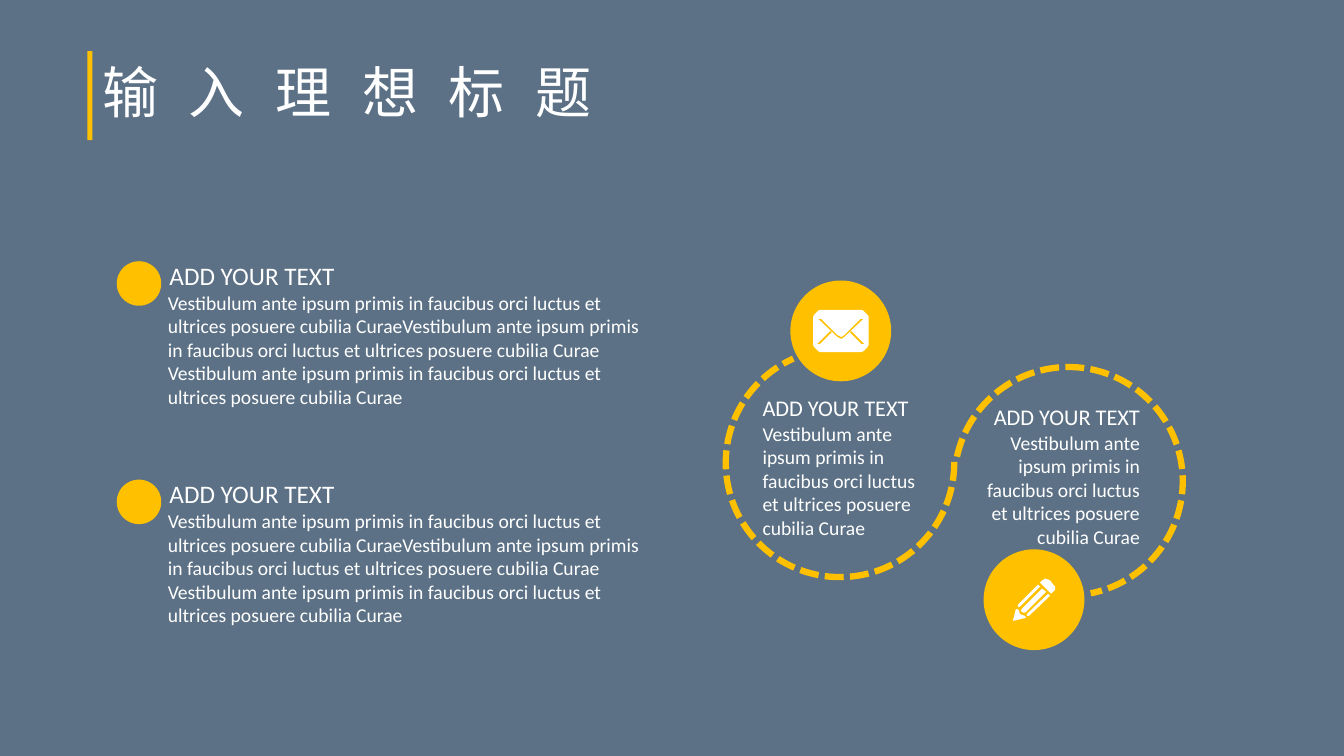
import math
from dataclasses import dataclass

import pptx
import pptx.util
import pptx.dml.color
import pptx.enum.dml
import pptx.enum.shapes
import pptx.enum.text
import pptx.oxml.ns
from lxml import etree

SHAPE = pptx.enum.shapes.MSO_SHAPE
ALIGN = pptx.enum.text.PP_ALIGN
ANCHOR = pptx.enum.text.MSO_ANCHOR


@dataclass(frozen=True)
class Theme:
    ground: str = "5C7185"
    accent: str = "FFC000"
    light: str = "FFFFFF"
    latin: str = "Calibri"
    cjk: str = "Noto Sans CJK SC"
    title: int = 40
    title_tracking: int = 22
    item_heading: int = 18
    loop_heading: int = 16
    body: int = 14
    loop_line: float = 4.5


THEME = Theme()

# The slide is a grid of 16 by 9 square cells; every box is in cells
COLUMNS, ROWS = 16, 9
CELL = pptx.util.Inches(13.333) / COLUMNS
ICON_UNIT = pptx.util.Inches(0.01)

HEADING = "ADD YOUR TEXT"
SENTENCE = ("Vestibulum ante ipsum primis in faucibus orci luctus et "
            "ultrices posuere cubilia Curae")


def cells(*lengths):
    return [pptx.util.Emu(round(length * CELL)) for length in lengths]


def rgb(code):
    return pptx.dml.color.RGBColor.from_string(code)


def paint(shape, color):
    shape.shadow.inherit = False
    shape.fill.solid()
    shape.fill.fore_color.rgb = rgb(color)
    shape.line.fill.background()


def add_solid(slide, kind, box, color):
    paint(slide.shapes.add_shape(kind, *cells(*box)), color)


def add_text(slide, box, paragraphs, size, font=THEME.latin, align=ALIGN.LEFT):
    frame = slide.shapes.add_textbox(*cells(*box)).text_frame
    frame.word_wrap = True
    for index, words in enumerate(paragraphs):
        paragraph = frame.add_paragraph() if index else frame.paragraphs[0]
        paragraph.alignment = align
        run = paragraph.add_run()
        run.text = words
        run.font.size = pptx.util.Pt(size)
        run.font.name = font
        run.font.color.rgb = rgb(THEME.light)
    return frame


# Icons: contours in hundredths of an inch, drawn as one outline with gaps
def rounded_outline(width, height, radius, steps=6):
    corners = [(width - radius, height - radius), (radius, height - radius),
               (radius, radius), (width - radius, radius)]
    return [(x + radius * math.cos(angle), y + radius * math.sin(angle))
            for quarter, (x, y) in enumerate(corners)
            for angle in [(quarter + step / steps) * math.pi / 2
                          for step in range(steps + 1)]]


ENVELOPE = (55, 42, [
    rounded_outline(55, 42, 10),
    [(5, 9), (24, 27), (27.5, 29), (31, 27), (50, 9), (47, 9),
     (31, 25), (27.5, 27), (24, 25), (8, 9)],
    [(38, 21), (36, 22), (48, 34), (51, 34)],
    [(17, 21), (4, 34), (7, 34), (19, 22)],
])
PENCIL = (42, 42, [
    [(40, 13), (38, 15), (27, 4), (29, 2), (32, 0.4), (35, 0.6), (37, 2),
     (40, 6), (41.6, 8), (41.5, 11)],
    [(14, 35), (14, 37), (16, 37), (37, 17), (35, 15)],
    [(5, 26), (5, 28), (7, 28), (27, 8), (25, 6)],
    [(29, 10), (9, 30), (8.5, 31.5), (9, 33), (11, 34), (13, 33), (33, 13)],
    [(13, 39), (12, 37), (9, 36.5), (7, 35), (6, 32), (6, 31), (3, 30),
     (0, 42)],
])


def add_icon(slide, center_x, center_y, icon):
    width, height, contours = icon
    builder = slide.shapes.build_freeform(*contours[0][0], scale=ICON_UNIT)
    for index, contour in enumerate(contours):
        if index:
            builder.move_to(*contour[0])
        builder.add_line_segments(contour[1:], close=True)
    left, top = cells(center_x, center_y)
    paint(builder.convert_to_shape(int(left - width * ICON_UNIT / 2),
                                   int(top - height * ICON_UNIT / 2)),
          THEME.light)


# Title with its accent bar
def add_title(slide, left, top, width, height):
    add_solid(slide, SHAPE.RECTANGLE, (left, top + 0.34, 0.06, 1.06),
              THEME.accent)
    frame = add_text(slide, (left + 0.06, top, width, height),
                     ["输入理想标题"], THEME.title, THEME.cjk)
    frame.vertical_anchor = ANCHOR.MIDDLE
    frame.paragraphs[0].line_spacing = 0.9
    properties = frame.paragraphs[0].runs[0].font._element
    properties.set("spc", str(THEME.title_tracking * 100))
    etree.SubElement(properties, pptx.oxml.ns.qn("a:ea"), typeface=THEME.cjk)


# List item: dot, heading and two paragraphs
def add_item(slide, left, top, width):
    add_text(slide, (left + 0.49, top + 0.36, width - 0.49, 1.81),
             [SENTENCE + SENTENCE, SENTENCE], THEME.body)
    add_text(slide, (left + 0.51, top, 2.38, 0.48), [HEADING],
             THEME.item_heading)
    add_solid(slide, SHAPE.OVAL, (left, top + 0.07, 0.53, 0.53), THEME.accent)


# Dashed loop; its badge and text are placed from the loop's corner
def add_loop(slide, left, top, size, rotation, badge, icon, text_top, align):
    arc = slide.shapes.add_shape(SHAPE.ARC, *cells(left, top, size, size))
    arc.adjustments[0] = 68.178
    arc.adjustments[1] = 0
    arc.rotation = rotation
    arc.shadow.inherit = False
    arc.fill.background()
    arc.line.color.rgb = rgb(THEME.accent)
    arc.line.width = pptx.util.Pt(THEME.loop_line)
    arc.line.dash_style = pptx.enum.dml.MSO_LINE.SQUARE_DOT

    diameter = 1.2
    badge_x, badge_y = left + badge[0], top + badge[1]
    add_solid(slide, SHAPE.OVAL, (badge_x, badge_y, diameter, diameter),
              THEME.accent)
    add_icon(slide, badge_x + diameter / 2, badge_y + diameter / 2, icon)

    lines = [(HEADING, THEME.loop_heading, 2.38, 0.44, 0),
             (SENTENCE, THEME.body, 2.16, 1.54, 0.33)]
    for words, type_size, width, height, drop in lines:
        text_left = (left + size - 0.39 - width if align == ALIGN.RIGHT
                     else left + 0.32)
        add_text(slide, (text_left, top + text_top + drop, width, height),
                 [words], type_size, align=align)


def main():
    deck = pptx.Presentation()
    deck.slide_width, deck.slide_height = cells(COLUMNS, ROWS)
    slide = deck.slides.add_slide(deck.slide_layouts[6])
    slide.background.fill.solid()
    slide.background.fill.fore_color.rgb = rgb(THEME.ground)

    add_title(slide, 1.04, 0.27, 13.8, 1.74)
    for row in range(2):
        add_item(slide, 1.39, 3.04 + row * 2.6, 6.45)
    add_loop(slide, 11.36, 4.37, 2.72, 78.8, (0.35, 2.17), PENCIL, 0.37,
             ALIGN.RIGHT)
    add_loop(slide, 8.64, 4.15, 2.72, 245.9, (0.77, -0.81), ENVELOPE, 0.48,
             ALIGN.LEFT)
    deck.save("out.pptx")


if __name__ == "__main__":
    main()
